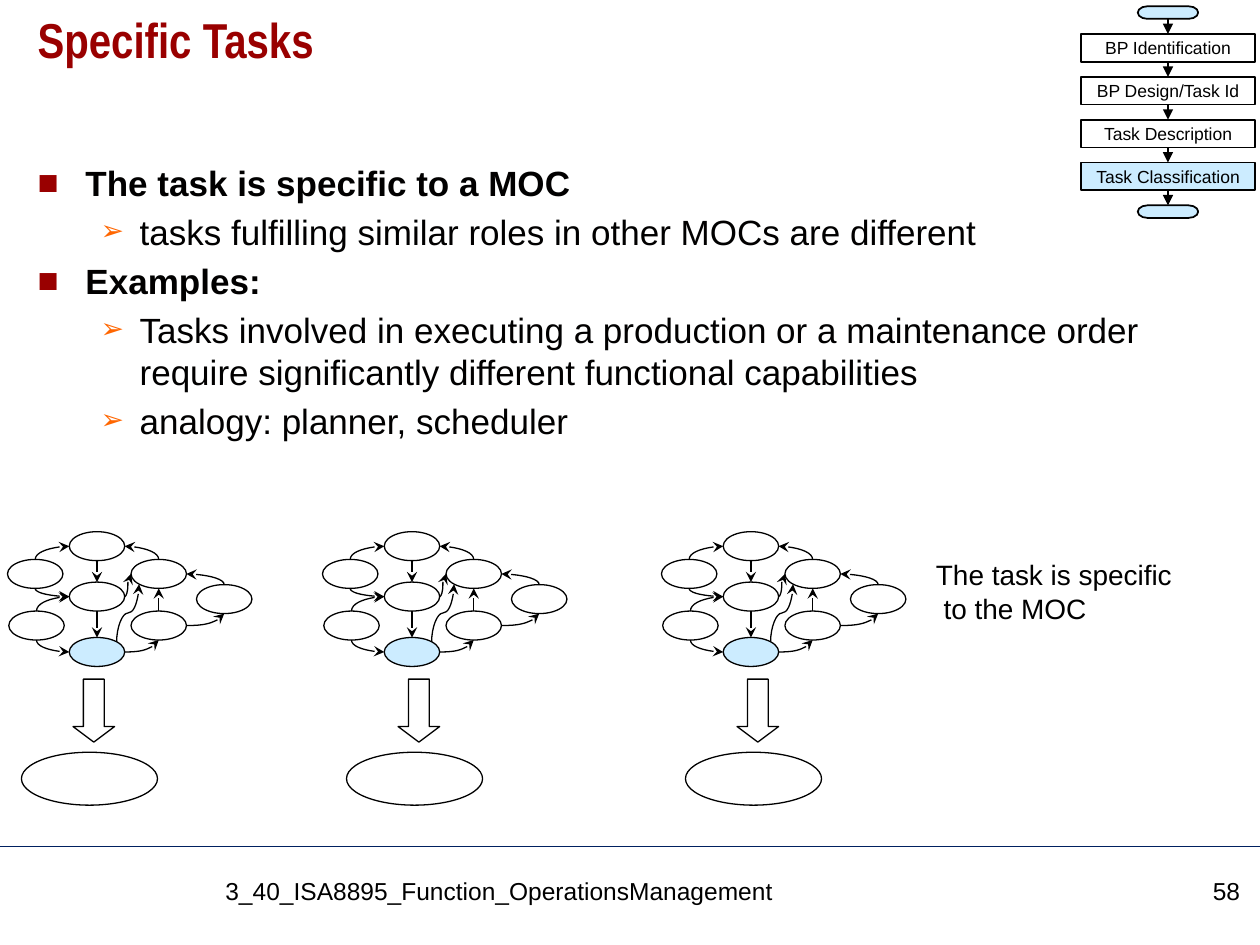
"""Build the "Specific Tasks" slide with its task networks and process chain."""
from itertools import pairwise

from lxml.etree import SubElement
from pptx import Presentation
from pptx.dml.color import RGBColor
from pptx.enum.shapes import MSO_CONNECTOR as Link, MSO_SHAPE as Shape
from pptx.enum.text import MSO_ANCHOR as Anchor, PP_ALIGN as Align
from pptx.oxml.ns import qn
from pptx.util import Inches, Pt

BLACK = RGBColor(0x00, 0x00, 0x00)
WHITE = RGBColor(0xFF, 0xFF, 0xFF)
RED = RGBColor(0x99, 0x00, 0x00)
INK = RGBColor(0x01, 0x00, 0x00)
ORANGE = RGBColor(0xFF, 0x66, 0x00)
PALE_BLUE = RGBColor(0xCC, 0xEC, 0xFF)
NAVY = RGBColor(0x00, 0x20, 0x60)

TITLE = "Specific Tasks"
POINTS = [
    (0, "The task is specific to a MOC"),
    (1, "tasks fulfilling similar roles in other MOCs are different"),
    (0, "Examples:"),
    (1, "Tasks involved in executing a production or a maintenance order "
        "require significantly different functional capabilities"),
    (1, "analogy: planner, scheduler"),
]
LEVELS = [
    dict(bullet="■", color=RED, scale=100, margin=0.38, hang=0.38, bold=True),
    dict(bullet="➢", color=ORANGE, scale=80, margin=0.81, hang=0.31, bold=False),
]
NETWORK_NOTE = ["The task is specific", " to the MOC"]
FOOTER = "3_40_ISA8895_Function_OperationsManagement"
PAGE = "58"

STEPS = ["BP Identification", "BP Design/Task Id", "Task Description", "Task Classification"]
CURRENT_STEP = "Task Classification"
CHAIN_LEFT, CHAIN_WIDTH, STEP_HEIGHT = 8.58, 1.38, 0.22
STEP_TOP, STEP_PITCH = 0.27, 0.34
END_WIDTH, END_HEIGHT, END_TOPS = 0.48, 0.1, (0.05, 1.63)

NETWORK_LEFTS = [0, 2.5, 5.19]
RESULT_LEFTS = [0.17, 2.75, 5.44]
TASK_WIDTH, TASK_HEIGHT = 0.44, 0.23
TASKS = {
    "start": (0.55, 4.22),
    "middle": (0.55, 4.62),
    "specific": (0.55, 5.06),
    "upper left": (0.06, 4.44),
    "lower left": (0.07, 4.85),
    "upper right": (1.04, 4.44),
    "lower right": (1.04, 4.85),
    "far right": (1.56, 4.64),
}
SITES = {"N": (0.5, 0), "S": (0.5, 1), "W": (0, 0.5), "E": (1, 0.5),
         "NE": (0.854, 0.146), "SW": (0.146, 0.854)}
FLOWS = [
    ("straight", "start", "S", "middle", "N"),
    ("straight", "middle", "S", "specific", "N"),
    ("straight", "lower right", "N", "upper right", "S"),
    ("corner", "upper left", "N", "start", "W"),
    ("corner", "upper left", "S", "middle", "W"),
    ("corner", "lower left", "N", "middle", "W"),
    ("corner", "lower left", "S", "specific", "W"),
    ("corner", "upper right", "N", "start", "E"),
    ("corner", "far right", "N", "upper right", "E"),
    ("corner", "lower right", "E", "far right", "S"),
    ("corner", "specific", "E", "lower right", "S"),
    ("wave", "middle", "E", "upper right", "W"),
    ("wave", "specific", "NE", "upper right", "SW"),
]


def add_run(paragraph, text, size, color=BLACK, font="Arial", bold=False):
    run = paragraph.add_run()
    run.text = text
    run.font.size, run.font.name, run.font.bold = Pt(size), font, bold
    run.font.color.rgb = color


def add_text(shapes, box, lines, size, align=Align.LEFT, wrap=True, **style):
    frame = shapes.add_textbox(*map(Inches, box)).text_frame
    frame.word_wrap = wrap
    for index, line in enumerate(lines):
        paragraph = frame.add_paragraph() if index else frame.paragraphs[0]
        paragraph.alignment = align
        add_run(paragraph, line, size, **style)
    return frame


def add_outline(shapes, preset, box, fill=None, line=BLACK, weight=0.75):
    shape = shapes.add_shape(preset, *map(Inches, box))
    shape.shadow.inherit = False
    if fill is None:
        shape.fill.background()
    else:
        shape.fill.solid()
        shape.fill.fore_color.rgb = fill
    if line is None:
        shape.line.fill.background()
    else:
        shape.line.color.rgb = line
        shape.line.width = Pt(weight)
    return shape


def add_link(shapes, kind, begin, end, head=None, color=BLACK, weight=0.75):
    link = shapes.add_connector(kind, *map(Inches, (*begin, *end)))
    link.line.color.rgb = color
    link.line.width = Pt(weight)
    if head:
        SubElement(link.line._get_or_add_ln(), qn("a:tailEnd"), type=head)
    SubElement(link._element.spPr, qn("a:effectLst"))
    return link


def add_curve(shapes, bend, begin, end, vertical):
    (x1, y1), (x2, y2) = begin, end
    turn = 0
    if vertical:
        turn = 270 if x2 > x1 else 90
        sign = 1 if turn == 90 else -1
        along, across = sign * (y2 - y1) / 2, -sign * (x2 - x1) / 2
        mid_x, mid_y = (x1 + x2) / 2, (y1 + y2) / 2
        begin = mid_x - along, mid_y - across
        end = mid_x + along, mid_y + across
    curve = add_link(shapes, Link.CURVE, begin, end, "stealth")
    properties = curve._element.spPr
    if turn:
        properties.find(qn("a:xfrm")).set("rot", str(turn * 60000))
    if bend == "corner":
        properties.find(qn("a:prstGeom")).set("prst", "curvedConnector2")


def add_points(shapes):
    frame = shapes.add_textbox(*map(Inches, (0.2, 1.23, 9.61, 5.35))).text_frame
    frame.word_wrap = True
    for index, (depth, text) in enumerate(POINTS):
        level = LEVELS[depth]
        paragraph = frame.add_paragraph() if index else frame.paragraphs[0]
        paragraph.level = depth
        if index:
            paragraph.space_before = Pt(4)
        properties = paragraph._p.get_or_add_pPr()
        properties.set("marL", str(Inches(level["margin"])))
        properties.set("indent", str(-Inches(level["hang"])))
        bullet_color = SubElement(properties, qn("a:buClr"))
        SubElement(bullet_color, qn("a:srgbClr"), val=str(level["color"]))
        SubElement(properties, qn("a:buSzPct"), val=str(level["scale"] * 1000))
        SubElement(properties, qn("a:buFont"), typeface="Arial")
        SubElement(properties, qn("a:buChar"), char=level["bullet"])
        add_run(paragraph, text, 20, INK, bold=level["bold"])


def add_network(shapes, left, result_left):
    for task, (x, y) in TASKS.items():
        fill = PALE_BLUE if task == "specific" else None
        add_outline(shapes, Shape.OVAL, (left + x, y, TASK_WIDTH, TASK_HEIGHT), fill)

    def site(task, side):
        (x, y), (across, down) = TASKS[task], SITES[side]
        return left + x + across * TASK_WIDTH, y + down * TASK_HEIGHT

    for bend, source, leaving, target, entering in FLOWS:
        begin, end = site(source, leaving), site(target, entering)
        if bend == "straight":
            add_link(shapes, Link.STRAIGHT, begin, end, "stealth")
        else:
            add_curve(shapes, bend, begin, end, leaving != "E")
    arrow = add_outline(shapes, Shape.DOWN_ARROW, (result_left + 0.41, 5.39, 0.33, 0.5))
    arrow.adjustments[1] = 0.374
    add_outline(shapes, Shape.OVAL, (result_left, 5.97, 1.08, 0.42))


def add_chain(shapes):
    add_outline(shapes, Shape.RECTANGLE, (CHAIN_LEFT, 0.04, CHAIN_WIDTH, 1.7), WHITE, None)
    end_left = CHAIN_LEFT + (CHAIN_WIDTH - END_WIDTH) / 2
    first, last = [add_outline(shapes, Shape.FLOWCHART_TERMINATOR,
                               (end_left, top, END_WIDTH, END_HEIGHT), PALE_BLUE, weight=1)
                   for top in END_TOPS]
    steps = []
    for index, name in enumerate(STEPS):
        box = (CHAIN_LEFT, STEP_TOP + index * STEP_PITCH, CHAIN_WIDTH, STEP_HEIGHT)
        step = add_outline(shapes, Shape.RECTANGLE, box,
                           PALE_BLUE if name == CURRENT_STEP else None, weight=1)
        frame = step.text_frame
        frame.margin_left = frame.margin_right = frame.margin_top = frame.margin_bottom = 0
        frame.vertical_anchor = Anchor.MIDDLE
        frame.paragraphs[0].alignment = Align.CENTER
        add_run(frame.paragraphs[0], name, 10)
        steps.append(step)
    for upper, lower in pairwise([first, *steps, last]):
        link = add_link(shapes, Link.STRAIGHT, (9.27, 0.2), (9.27, 0.3), "triangle", weight=1)
        link.begin_connect(upper, 2)
        link.end_connect(lower, 0)


def main():
    deck = Presentation()
    deck.slide_width, deck.slide_height = Inches(10), Inches(7.5)
    shapes = deck.slides.add_slide(deck.slide_layouts[6]).shapes
    add_link(shapes, Link.STRAIGHT, (0, 6.72), (10, 6.72), color=NAVY)
    title = add_text(shapes, (0.2, 0.08, 9.61, 0.83), [TITLE], 28,
                     color=RED, font="Arial Narrow", bold=True)
    title.paragraphs[0].line_spacing = 0.9
    add_points(shapes)
    add_text(shapes, (1.69, 6.9, 7.21, 0.45), [FOOTER], 14)
    add_text(shapes, (9.02, 6.9, 0.92, 0.45), [PAGE], 14, Align.RIGHT)
    for left, result_left in zip(NETWORK_LEFTS, RESULT_LEFTS):
        add_network(shapes, left, result_left)
    add_text(shapes, (7.33, 4.38, 2.08, 0.64), NETWORK_NOTE, 16, wrap=False)
    add_chain(shapes.add_group_shape().shapes)
    deck.save("out.pptx")


if __name__ == "__main__":
    main()
